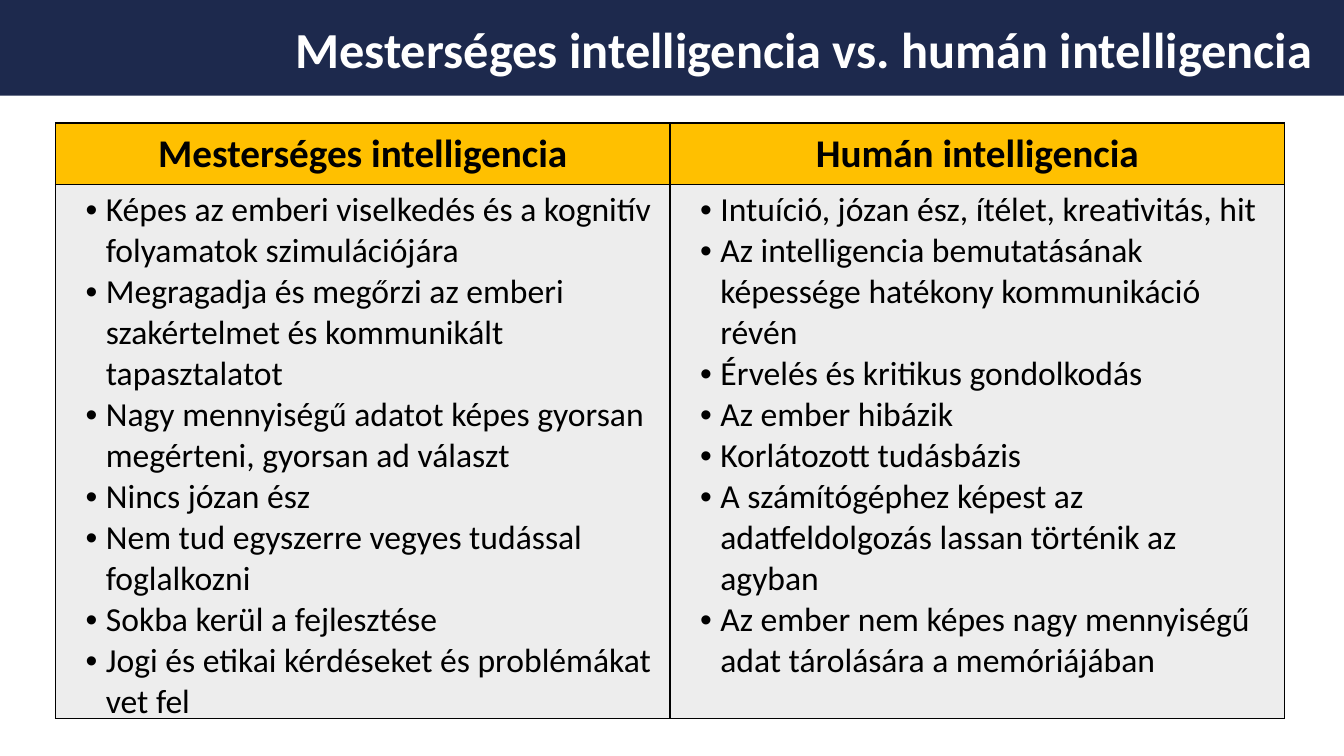
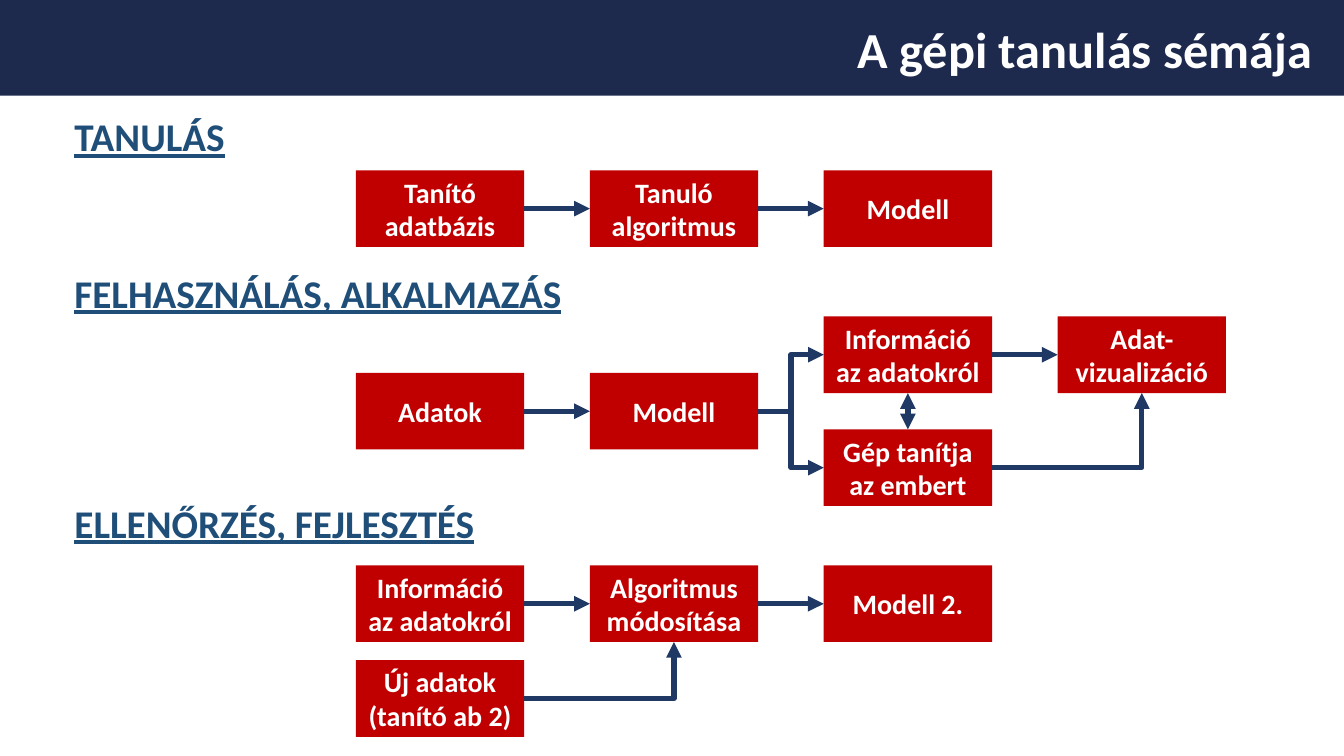
"""Build two slides on artificial intelligence and machine learning."""
import pptx
import pptx.util
import pptx.dml.color
import pptx.enum.shapes
import pptx.enum.text
import pptx.oxml
import pptx.oxml.ns
from lxml import etree

PX = 9144
FONT = "Calibri"
COLORS = {
    "band": "1D294D", "white": "FFFFFF", "black": "000000",
    "header": "FFC000", "body": "EDEDED",
    "heading": "1F4E79", "box": "C00000", "arrow": "203864",
}
ALIGN = pptx.enum.text.PP_ALIGN
MIDDLE = pptx.enum.text.MSO_ANCHOR.MIDDLE
RECT = pptx.enum.shapes.MSO_SHAPE.RECTANGLE
STRAIGHT = pptx.enum.shapes.MSO_CONNECTOR.STRAIGHT
ELBOW = pptx.enum.shapes.MSO_CONNECTOR.ELBOW
TOP, LEFT, BOTTOM, RIGHT = range(4)
COLUMNS = [353 + 232 * i for i in range(4)]
BOX_W, BOX_H = 167, 76

COMPARISON = {
    "Mesterséges intelligencia": [
        "Képes az emberi viselkedés és a kognitív folyamatok szimulációjára",
        "Megragadja és megőrzi az emberi szakértelmet és kommunikált tapasztalatot",
        "Nagy mennyiségű adatot képes gyorsan megérteni, gyorsan ad választ",
        "Nincs józan ész",
        "Nem tud egyszerre vegyes tudással foglalkozni",
        "Sokba kerül a fejlesztése",
        "Jogi és etikai kérdéseket és problémákat vet fel",
    ],
    "Humán intelligencia": [
        "Intuíció, józan ész, ítélet, kreativitás, hit",
        "Az intelligencia bemutatásának képessége hatékony kommunikáció révén",
        "Érvelés és kritikus gondolkodás",
        "Az ember hibázik",
        "Korlátozott tudásbázis",
        "A számítógéphez képest az adatfeldolgozás lassan történik az agyban",
        "Az ember nem képes nagy mennyiségű adat tárolására a memóriájában",
    ],
}
HEADINGS = [(107, 171, "TANULÁS"), (262, 510, "FELHASZNÁLÁS, ALKALMAZÁS"),
            (490, 421, "ELLENŐRZÉS, FEJLESZTÉS")]
BOXES = {
    "training data": (0, 169, "Tanító adatbázis"),
    "learner": (1, 169, "Tanuló algoritmus"),
    "model": (2, 169, "Modell"),
    "data": (0, 370, "Adatok"),
    "used model": (1, 370, "Modell"),
    "information": (2, 314, "Információ az adatokról"),
    "visualisation": (3, 314, "Adat-vizualizáció"),
    "teaching": (2, 426, "Gép tanítja az embert"),
    "feedback": (0, 561, "Információ az adatokról"),
    "modification": (1, 561, "Algoritmus módosítása"),
    "model 2": (2, 561, "Modell 2."),
    "new data": (0, 655, "Új adatok\n(tanító ab 2)"),
}
STRAIGHT_ARROWS = [
    ("training data", "learner"), ("learner", "model"),
    ("data", "used model"), ("information", "visualisation"),
    ("feedback", "modification"), ("modification", "model 2"),
]
FORKS = [("used model", "teaching"), ("used model", "information")]
CORNERS = [("new data", "modification"), ("teaching", "visualisation")]


def px(*lengths):
    return [pptx.util.Emu(n * PX) for n in lengths]


def rgb(name):
    return pptx.dml.color.RGBColor.from_string(COLORS[name])


def write(tf, text, size, color, bold=True, underline=None, align=ALIGN.LEFT):
    tf.text = text
    for p in tf.paragraphs:
        p.alignment = align
        for r in p.runs:
            r.font.name = FONT
            r.font.size = pptx.util.Pt(size)
            r.font.bold = bold
            r.font.underline = underline
            r.font.color.rgb = rgb(color)


def add_rect(s, x, y, w, h, fill):
    sp = s.shapes.add_shape(RECT, *px(x, y, w, h))
    sp.shadow.inherit = False
    sp.fill.solid()
    sp.fill.fore_color.rgb = rgb(fill)
    sp.line.fill.background()
    return sp


def add_text(s, x, y, w, h, text, size, color, wrap=True, **style):
    tf = s.shapes.add_textbox(*px(x, y, w, h)).text_frame
    tf.word_wrap = wrap
    write(tf, text, size, color, **style)


def add_slide(prs, title):
    s = prs.slides.add_slide(prs.slide_layouts[6])
    add_rect(s, 0, 0, 1334, 95, "band")
    add_text(s, 263, 13, 1049, 71, title, 36, "white", align=ALIGN.RIGHT)
    return s


def add_bullets(tf):
    for p in tf.paragraphs:
        pPr = p._p.get_or_add_pPr()
        pPr.set("marL", str(40 * PX))
        pPr.set("indent", str(-20 * PX))
        font = etree.SubElement(pPr, pptx.oxml.ns.qn("a:buFont"))
        font.set("typeface", "Arial")
        char = etree.SubElement(pPr, pptx.oxml.ns.qn("a:buChar"))
        char.set("char", "•")


def style_cell(cell, fill):
    tcPr = cell._tc.get_or_add_tcPr()
    for side in "LRTB":
        tcPr.append(pptx.oxml.parse_xml(
            f'<a:ln{side} {pptx.oxml.ns.nsdecls("a")} w="12700"><a:solidFill>'
            f'<a:srgbClr val="{COLORS["black"]}"/></a:solidFill></a:ln{side}>'))
    cell.fill.solid()
    cell.fill.fore_color.rgb = rgb(fill)


def add_comparison(s, x, y, w, header_h, body_h):
    frame = s.shapes.add_table(2, len(COMPARISON), *px(x, y, w, header_h + body_h))
    table = frame.table
    for row, height in zip(table.rows, px(header_h, body_h)):
        row.height = height
    for i, (header, items) in enumerate(COMPARISON.items()):
        head, body = table.cell(0, i), table.cell(1, i)
        style_cell(head, "header")
        head.vertical_anchor = MIDDLE
        write(head.text_frame, header, 28, "black", align=ALIGN.CENTER)
        style_cell(body, "body")
        write(body.text_frame, "\n".join(items), 24, "black", bold=False)
        add_bullets(body.text_frame)


def add_box(s, column, y, text):
    sp = add_rect(s, COLUMNS[column], y, BOX_W, BOX_H, "box")
    sp.text_frame.word_wrap = True
    sp.text_frame.vertical_anchor = MIDDLE
    write(sp.text_frame, text, 20, "white", align=ALIGN.CENTER)
    return sp


def add_arrow(s, start, end, kind=STRAIGHT, sides=(RIGHT, LEFT), ends=("tailEnd",)):
    line = s.shapes.add_connector(kind, 0, 0, 0, 0)
    line.begin_connect(start, sides[0])
    line.end_connect(end, sides[1])
    line.line.color.rgb = rgb("arrow")
    line.line.width = pptx.util.Pt(3.75)
    ln = line.line._get_or_add_ln()
    for name in ends:
        etree.SubElement(ln, pptx.oxml.ns.qn(f"a:{name}")).set("type", "triangle")
    spPr = line._element.spPr
    etree.SubElement(spPr, pptx.oxml.ns.qn("a:effectLst"))
    return line


def add_corner(s, start, end):
    line = add_arrow(s, start, end, ELBOW, (RIGHT, BOTTOM))
    geometry = line._element.spPr.find(pptx.oxml.ns.qn("a:prstGeom"))
    geometry.set("prst", "bentConnector2")


def add_scheme(s):
    for y, w, text in HEADINGS:
        add_text(s, 64, y, w, 57, text, 28, "heading", wrap=False, underline=True)
    boxes = {name: add_box(s, *box) for name, box in BOXES.items()}
    for start, end in STRAIGHT_ARROWS:
        add_arrow(s, boxes[start], boxes[end])
    for start, end in FORKS:
        add_arrow(s, boxes[start], boxes[end], ELBOW)
    for start, end in CORNERS:
        add_corner(s, boxes[start], boxes[end])
    add_arrow(s, boxes["teaching"], boxes["information"],
              sides=(TOP, BOTTOM), ends=("headEnd", "tailEnd"))


def main():
    prs = pptx.Presentation()
    prs.slide_width = pptx.util.Inches(13.33)
    prs.slide_height = pptx.util.Inches(7.5)
    s = add_slide(prs, "Mesterséges intelligencia vs. humán intelligencia")
    add_comparison(s, 55, 122, 1219, 61, 530)
    add_scheme(add_slide(prs, "A gépi tanulás sémája"))
    prs.save("out.pptx")


if __name__ == "__main__":
    main()
